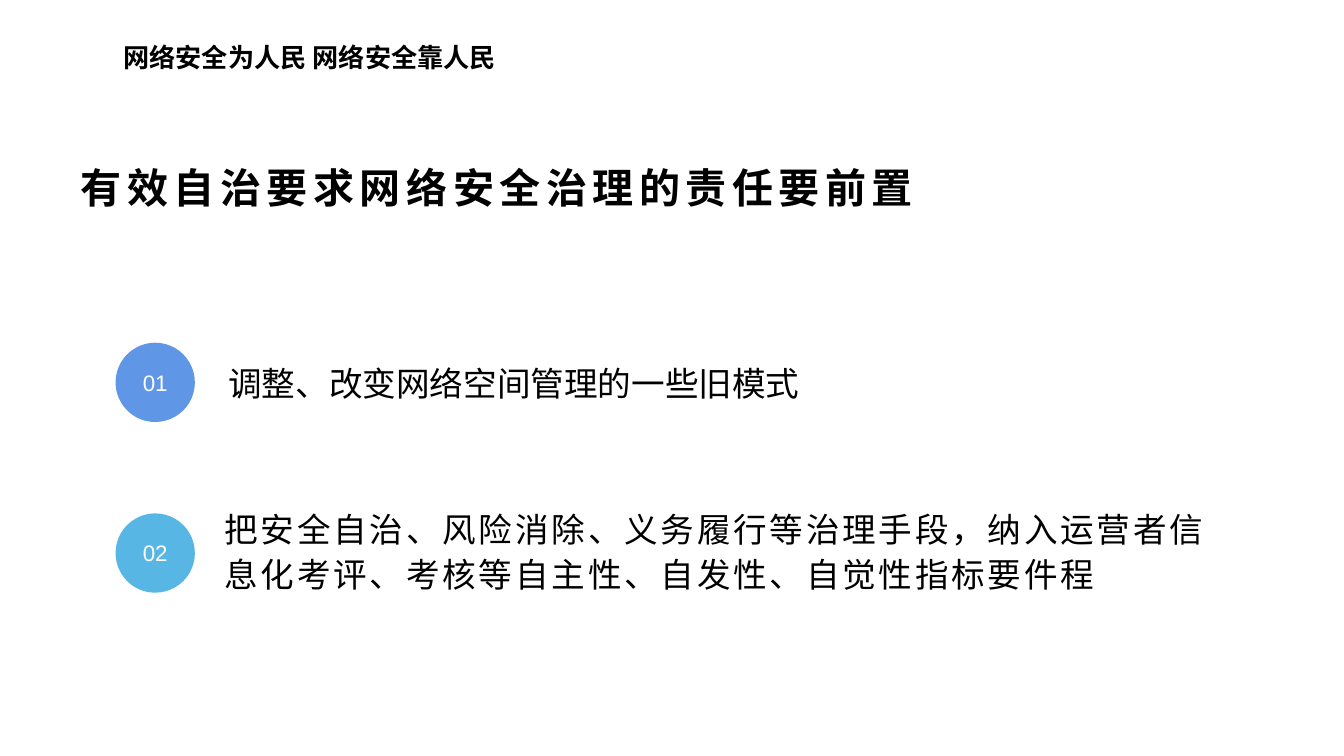
from dataclasses import dataclass

from lxml.etree import SubElement
from pptx import Presentation
from pptx.dml.color import RGBColor
from pptx.enum.shapes import MSO_SHAPE
from pptx.enum.text import MSO_ANCHOR, MSO_AUTO_SIZE, PP_ALIGN
from pptx.oxml.ns import qn
from pptx.util import Inches, Pt


@dataclass(frozen=True)
class Theme:
    ink: str = "000000"
    paper: str = "FFFFFF"
    marks: tuple = ("6096E6", "58B6E5")
    sans: str = "Noto Sans CJK SC"
    latin: str = "Arial"
    banner: int = 14
    title: int = 22
    body: int = 18
    label: int = 12


THEME = Theme()
WIDE = 10
HIGH = WIDE * 9 / 16
DOT = 0.59


def place(shape, box):
    shape.left, shape.top, shape.width, shape.height = map(Inches, box)


def write(shape, text, size, face=THEME.sans, color=THEME.ink, bold=False,
          track=0, align=PP_ALIGN.LEFT, anchor=MSO_ANCHOR.TOP, side=0.1,
          line=1.0, after=0):
    frame = shape.text_frame
    frame.word_wrap = True
    frame.auto_size = MSO_AUTO_SIZE.NONE
    frame.vertical_anchor = anchor
    frame.margin_left = frame.margin_right = Inches(side)
    frame.margin_top = frame.margin_bottom = Inches(0.05)
    para = frame.paragraphs[0]
    props = para._p.get_or_add_pPr()
    props.set("marL", "0")
    props.set("indent", "0")
    SubElement(props, qn("a:buNone"))
    para.alignment = align
    para.line_spacing = line
    para.space_before = Pt(0)
    para.space_after = Pt(after)
    run = para.add_run()
    run.text = text
    font = run.font
    font.size, font.bold, font.name = Pt(size), bold, face
    font.color.rgb = RGBColor.from_string(color)
    marks = run._r.get_or_add_rPr()
    marks.set("spc", str(round(track * 100)))
    SubElement(marks, qn("a:ea")).set("typeface", THEME.sans)


def banner(slide, box):
    shape = slide.shapes.add_textbox(0, 0, 0, 0)
    place(shape, box)
    write(shape, "网络安全为人民 网络安全靠人民", THEME.banner, bold=True)


def heading(slide, box):
    shape = slide.shapes.title
    place(shape, box)
    write(shape, "有效自治要求网络安全治理的责任要前置", THEME.title,
          bold=True, track=3, anchor=MSO_ANCHOR.MIDDLE)


def badge(slide, box, num):
    dot = slide.shapes.add_shape(MSO_SHAPE.ROUNDED_RECTANGLE, 0, 0, 0, 0)
    place(dot, box)
    dot.adjustments[0] = 0.5
    dot.shadow.inherit = False
    dot.fill.solid()
    dot.fill.fore_color.rgb = RGBColor.from_string(THEME.marks[num - 1])
    dot.line.fill.background()
    write(dot, f"{num:02d}", THEME.label, face=THEME.latin, color=THEME.paper,
          align=PP_ALIGN.CENTER, anchor=MSO_ANCHOR.MIDDLE, side=0)


def points(slide, box):
    left, top, width, height = box
    pitch = height - DOT
    for num in (1, 2):
        badge(slide, (left, top + (num - 1) * pitch, DOT, DOT), num)
    first = slide.shapes.add_textbox(0, 0, 0, 0)
    place(first, (left + 0.74, top + 0.1, width - 0.74, 0.4))
    write(first, "调整、改变网络空间管理的一些旧模式", THEME.body, face=THEME.latin)
    second = slide.placeholders[1]
    place(second, (left + 0.71, top + pitch - 0.11, width - 0.91, 0.85))
    write(second, "把安全自治、风险消除、义务履行等治理手段，纳入运营者信息化考评、"
          "考核等自主性、自发性、自觉性指标要件程", THEME.body,
          track=1.5, line=1.1, after=10)


def main():
    deck = Presentation()
    deck.slide_width, deck.slide_height = Inches(WIDE), Inches(HIGH)
    slide = deck.slides.add_slide(deck.slide_layouts[1])
    slide.background.fill.solid()
    slide.background.fill.fore_color.rgb = RGBColor.from_string(THEME.paper)
    banner(slide, (0.82, 0.26, 4.79, 0.34))
    heading(slide, (WIDE * 0.05, 1.1, WIDE * 0.9, 0.58))
    points(slide, (0.86, 2.55, 8.67, 1.86))
    deck.save("out.pptx")


if __name__ == "__main__":
    main()
